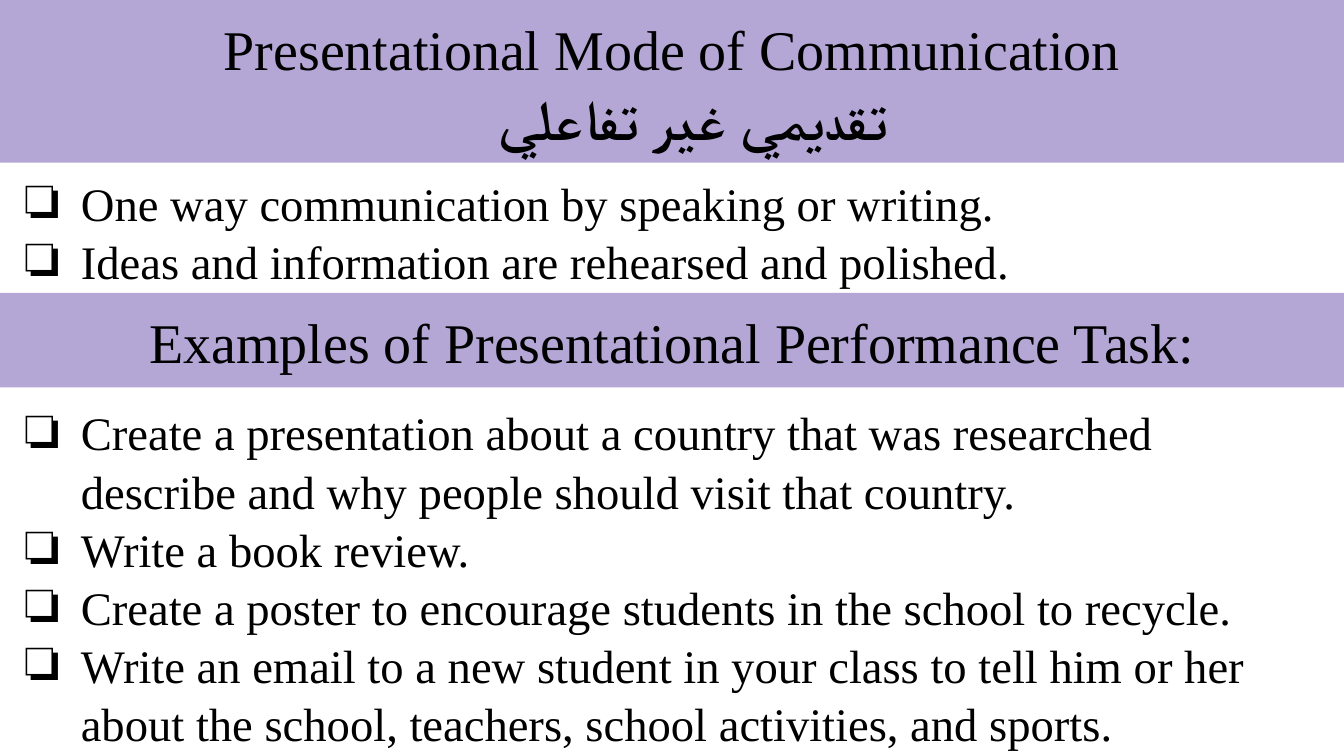
from pptx import Presentation
from pptx.dml.color import RGBColor
from pptx.enum.shapes import MSO_SHAPE
from pptx.enum.text import MSO_ANCHOR, PP_ALIGN
from pptx.oxml.ns import qn
from pptx.util import Pt
from lxml.etree import SubElement

PX = 9525
WIDTH, HEIGHT = 1280, 720
INSET = 13
FONT = "Times New Roman"
COLORS = {"band": "B4A7D6", "text": "000000"}


def rgb(name):
    return RGBColor.from_string(COLORS[name])


def add_text(p, text, size, bold=False, align=PP_ALIGN.LEFT, margin=0, indent=0, bullet=None):
    p.alignment = align
    p.line_spacing = 1.045
    pPr = p._p.get_or_add_pPr()
    pPr.set("marL", str(margin * PX))
    pPr.set("indent", str(indent * PX))
    if bullet:
        clr = SubElement(pPr, qn("a:buClr"))
        SubElement(clr, qn("a:srgbClr"), val=COLORS["text"])
        SubElement(pPr, qn("a:buFont"), typeface=FONT)
        SubElement(pPr, qn("a:buChar"), char=bullet)
    r = p.add_run()
    r.text = text
    r.font.size, r.font.bold, r.font.name = Pt(size), bold, FONT
    r.font.color.rgb = rgb("text")
    SubElement(r._r.get_or_add_rPr(), qn("a:cs"), typeface=FONT)


def set_frame(sp, anchor):
    tf = sp.text_frame
    tf.word_wrap = True
    tf.vertical_anchor = anchor
    tf.margin_left = tf.margin_right = tf.margin_top = tf.margin_bottom = INSET * PX
    return tf


def paragraphs(tf, items):
    for i, item in enumerate(items):
        yield (tf.add_paragraph() if i else tf.paragraphs[0]), item


def add_band(s, box, lines):
    sp = s.shapes.add_shape(MSO_SHAPE.RECTANGLE, *(v * PX for v in box))
    sp.shadow.inherit = False
    sp.fill.solid()
    sp.fill.fore_color.rgb = rgb("band")
    sp.line.fill.background()
    tf = set_frame(sp, MSO_ANCHOR.MIDDLE)
    for p, (text, style) in paragraphs(tf, lines):
        add_text(p, text, 40, align=PP_ALIGN.CENTER, **style)


def add_checklist(s, box, items):
    sp = s.shapes.add_textbox(*(v * PX for v in box))
    tf = set_frame(sp, MSO_ANCHOR.TOP)
    for p, text in paragraphs(tf, items):
        add_text(p, text, 33.3, margin=64, indent=-54, bullet="❏")


def main():
    prs = Presentation()
    prs.slide_width, prs.slide_height = WIDTH * PX, HEIGHT * PX
    s = prs.slides.add_slide(prs.slide_layouts[6])
    add_checklist(s, (0, 151, WIDTH, 133), [
        "One way communication by speaking or writing.",
        "Ideas and information are rehearsed and polished.",
    ])
    add_band(s, (0, 0, WIDTH, 155), [
        ("Presentational Mode of Communication", {}),
        ("تقديمي غير تفاعلي", {"bold": True, "margin": 40}),
    ])
    add_band(s, (-3, 279, WIDTH + 6, 90), [
        ("Examples of Presentational Performance Task:", {}),
    ])
    add_checklist(s, (0, 370, 1267, 348), [
        "Create a presentation about a country that was researched describe and why people should visit that country.",
        "Write a book review.",
        "Create a poster to encourage students in the school to recycle.",
        "Write an email to a new student in your class to tell him or her about the school, teachers, school activities, and sports.",
    ])


    prs.save("out.pptx")


if __name__ == "__main__":
    main()
